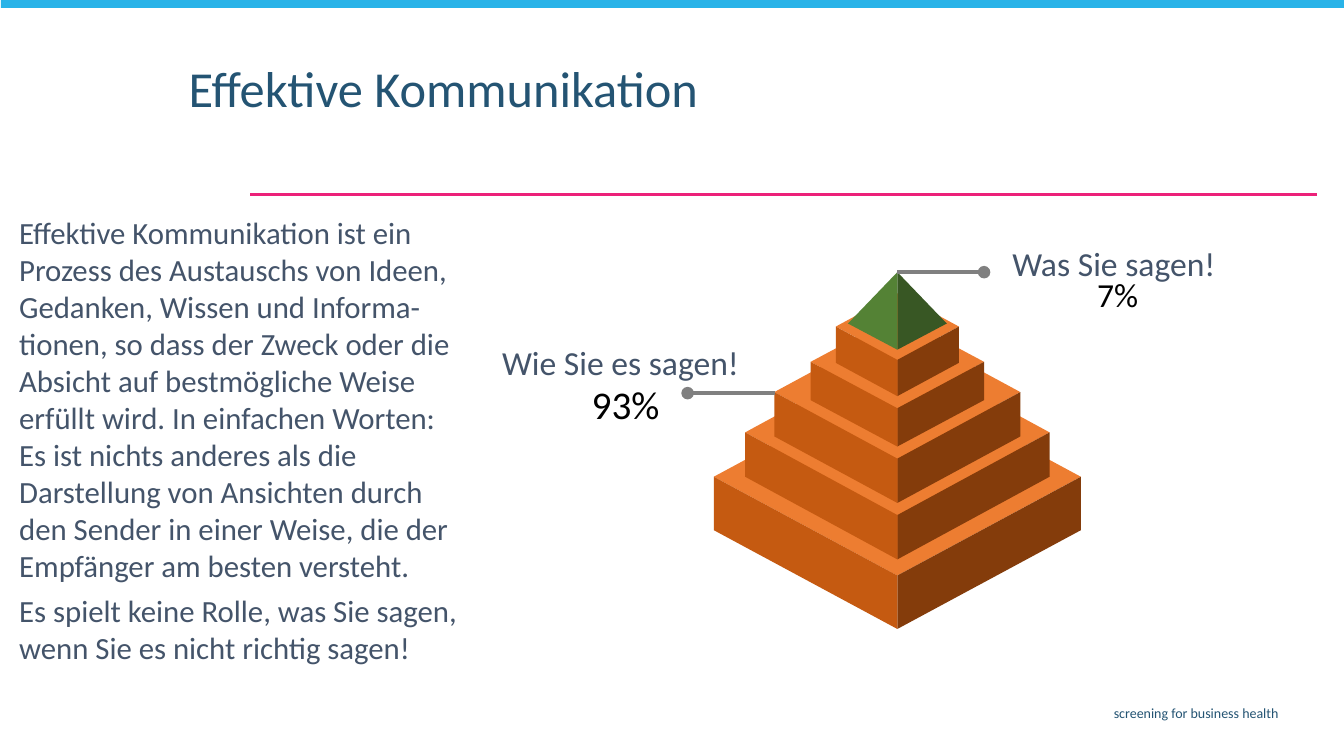
from dataclasses import dataclass, field

from lxml import etree
from pptx import Presentation
from pptx import util as u
from pptx.dml.color import RGBColor
from pptx.enum import shapes, text
from pptx.oxml.ns import qn

PX = 9144  # EMU per px, 100 px to the inch
CENTRE_X = 890
DEPTH_RATIO = 0.54
LEFT, RIGHT = text.PP_ALIGN.LEFT, text.PP_ALIGN.RIGHT

COLOURS = {
    "bar": "29B3E8", "rule": "EC2179", "heading": "245473", "body": "44546A",
    "value": "000000", "pointer": "808080",
    "tier_top": "ED7D31", "tier_left": "C55A11", "tier_right": "843C0B",
    "tip_left": "548235", "tip_right": "385724",
}


@dataclass
class Tier:
    half_width: int
    middle_y: int
    height: int


@dataclass
class Line:
    start: tuple[int, int]
    end: tuple[int, int]
    colour: str
    width: float
    dot: bool = False


@dataclass
class Copy:
    """Text with its place, inset and formatting."""
    box: tuple[int, int, int, int]
    paragraphs: list[str]
    size: int
    colour: str
    inset: int = 4
    gap: int = 0
    frame_format: dict = field(default_factory=dict)
    paragraph_format: dict = field(default_factory=dict)


TIERS = [Tier(182, 473, 53), Tier(151, 429, 44), Tier(122, 389, 44),
         Tier(86, 359, 38), Tier(61, 324, 36)]

LINES = [
    Line((1306, 193), (248, 193), "rule", 1.5),
    Line((CENTRE_X, 270), (976, 270), "pointer", 3, dot=True),
    Line((769, 390), (682, 390), "pointer", 3, dot=True),
]

HEADING = Copy((182, 58, 968, 76), ["Effektive Kommunikation"], 36, "heading", 5,
               paragraph_format={"line_spacing": 0.9})

EXPLANATION = Copy((15, 208, 447, 462), [
    "Effektive Kommunikation ist ein Prozess des Austauschs von Ideen, Gedanken, "
    "Wissen und Informa-tionen, so dass der Zweck oder die Absicht auf bestmögliche "
    "Weise erfüllt wird. In einfachen Worten: Es ist nichts anderes als die "
    "Darstellung von Ansichten durch den Sender in einer Weise, die der Empfänger "
    "am besten versteht.",
    "Es spielt keine Rolle, was Sie sagen, wenn Sie es nicht richtig sagen!",
], 22, "body", gap=6)

CAPTION_FRAME = {"vertical_anchor": text.MSO_ANCHOR.MIDDLE, "word_wrap": False}
TIGHT = {"line_spacing": u.Pt(13)}
LABELS = [
    Copy((370, 694, 903, 25), ["screening for business health"], 10, "heading", 5,
         paragraph_format={"alignment": RIGHT}),
    Copy((1084, 290, 192, 32), ["7%"], 24, "value", paragraph_format=TIGHT),
    Copy((999, 239, 213, 43), ["Was Sie sagen!"], 24, "body", 5,
         frame_format=CAPTION_FRAME),
    Copy((466, 402, 192, 33), ["93%"], 28, "value",
         paragraph_format={**TIGHT, "alignment": RIGHT}),
    Copy((492, 338, 246, 43), ["Wie Sie es sagen!"], 24, "body", 5,
         frame_format=CAPTION_FRAME, paragraph_format={"alignment": RIGHT}),
]


def apply_format(target, values: dict) -> None:
    for name, value in values.items():
        setattr(target, name, value)


def colour(name: str) -> RGBColor:
    return RGBColor.from_string(COLOURS[name])


def paint(shape, fill: str) -> None:
    shape.shadow.inherit = False
    shape.fill.solid()
    shape.fill.fore_color.rgb = colour(fill)
    shape.line.fill.background()


def write(shape, copy: Copy) -> None:
    sides = ("left", "top", "width", "height")
    apply_format(shape, {side: px * PX for side, px in zip(sides, copy.box)})
    frame = shape.text_frame
    margins = ("margin_left", "margin_top", "margin_right", "margin_bottom")
    apply_format(frame, {
        **dict.fromkeys(margins, copy.inset * PX),
        "auto_size": text.MSO_AUTO_SIZE.NONE,
        "vertical_anchor": text.MSO_ANCHOR.TOP,
        "word_wrap": True, **copy.frame_format,
    })
    for index, wording in enumerate(copy.paragraphs):
        paragraph = frame.add_paragraph() if index else frame.paragraphs[0]
        properties = paragraph._p.get_or_add_pPr()
        properties.set("marL", "0")
        properties.set("indent", "0")
        etree.SubElement(properties, qn("a:buNone"))
        apply_format(paragraph, {
            "alignment": LEFT, "line_spacing": 1.0,
            "space_before": u.Pt(copy.gap if index else 0),
            **copy.paragraph_format,
        })
        run = paragraph.add_run()
        run.text = wording
        apply_format(run.font, {"name": "Calibri", "size": u.Pt(copy.size)})
        run.font.color.rgb = colour(copy.colour)


def draw_line(slide, line: Line) -> None:
    ends = [px * PX for px in (*line.start, *line.end)]
    connector = slide.shapes.add_connector(shapes.MSO_CONNECTOR.STRAIGHT, *ends)
    connector.line.color.rgb = colour(line.colour)
    connector.line.width = u.Pt(line.width)
    if line.dot:
        etree.SubElement(connector.line._ln, qn("a:tailEnd"), type="oval")
    etree.SubElement(connector._element.spPr, qn("a:effectLst"))


def draw_face(slide, corners: list[tuple[int, int]], fill: str) -> None:
    builder = slide.shapes.build_freeform(*corners[0], scale=PX)
    builder.add_line_segments(corners[1:], close=True)
    paint(builder.convert_to_shape(), fill)


def draw_tier(slide, tier: Tier) -> None:
    depth = round(tier.half_width * DEPTH_RATIO)
    front = (CENTRE_X, tier.middle_y + depth)
    front_foot = (CENTRE_X, front[1] + tier.height)
    left, right = ((CENTRE_X + sign * tier.half_width, tier.middle_y)
                   for sign in (-1, 1))
    draw_face(slide, [(CENTRE_X, tier.middle_y - depth), right, front, left], "tier_top")
    for corner, fill in ((right, "tier_right"), (left, "tier_left")):
        foot = (corner[0], corner[1] + tier.height)
        draw_face(slide, [front_foot, foot, corner, front], fill)


def draw_tip(slide) -> None:
    apex, front = (CENTRE_X, 270), (CENTRE_X, 347)
    for side_x, fill in ((939, "tip_right"), (841, "tip_left")):
        draw_face(slide, [apex, front, (side_x, 321)], fill)


def main() -> None:
    deck = Presentation()
    deck.slide_width, deck.slide_height = 1333 * PX, 750 * PX
    slide = deck.slides.add_slide(deck.slide_layouts[1])
    write(slide.shapes.title, HEADING)
    write(slide.placeholders[1], EXPLANATION)
    top_bar = slide.shapes.add_shape(shapes.MSO_SHAPE.RECTANGLE,
                                     PX, -2 * PX, 1332 * PX, 10 * PX)
    paint(top_bar, "bar")
    for tier in TIERS:
        draw_tier(slide, tier)
    draw_tip(slide)
    for line in LINES:
        draw_line(slide, line)
    for label in LABELS:
        write(slide.shapes.add_textbox(0, 0, PX, PX), label)
    deck.save("out.pptx")


if __name__ == "__main__":
    main()
